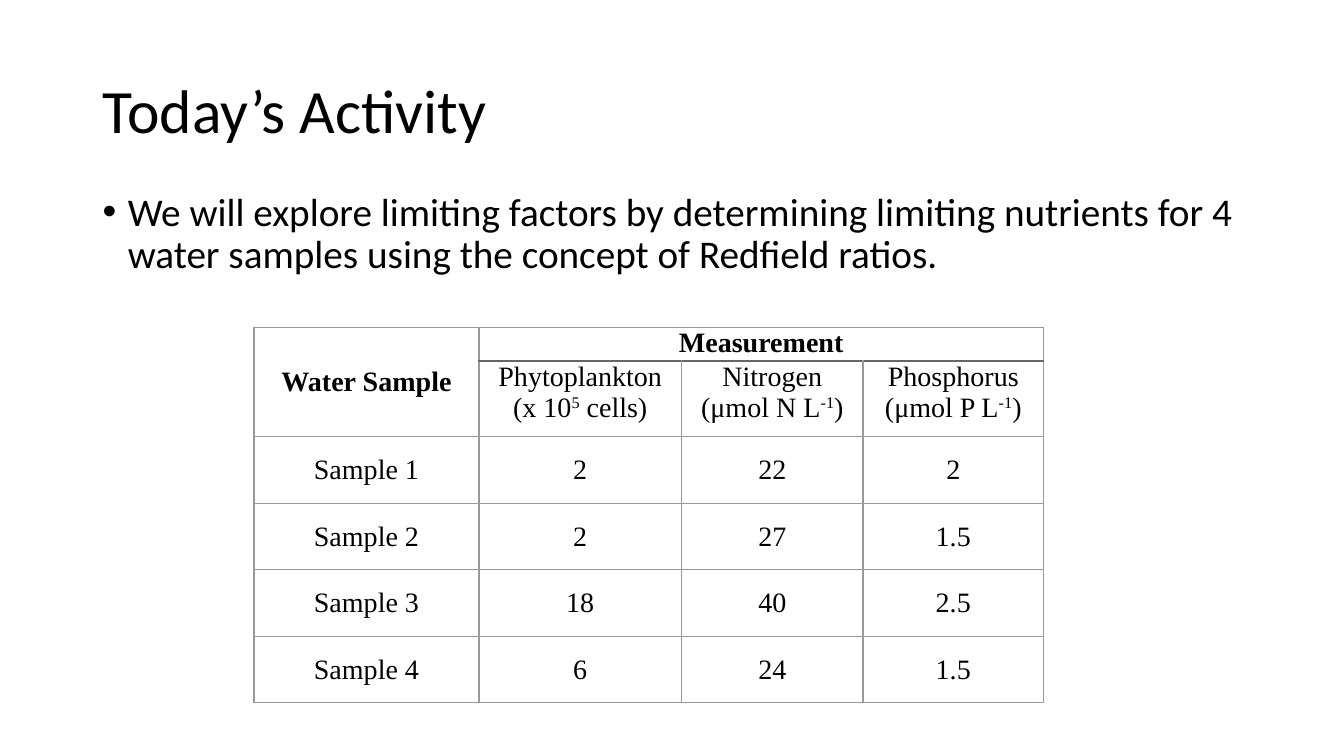
from dataclasses import dataclass
from lxml.etree import SubElement
from pptx import Presentation
from pptx.dml.color import RGBColor
from pptx.enum.text import MSO_ANCHOR, PP_ALIGN
from pptx.oxml import parse_xml
from pptx.oxml.ns import nsdecls, qn
from pptx.util import Inches, Pt


@dataclass(frozen=True)
class Theme:
    ink: str = "000000"
    grid: str = "999999"
    rule: str = "666666"
    sans: str = "Calibri"
    serif: str = "Times New Roman"
    title: int = 44
    body: int = 28
    cell: int = 20


theme = Theme()


def add_run(para, text, face, size, bold=False, raised=False):
    run = para.add_run()
    run.text = text
    run.font.name = face
    run.font.size = Pt(size)
    run.font.bold = bold
    run.font.color.rgb = RGBColor.from_string(theme.ink)
    if raised:
        run.font._element.set("baseline", "30000")


def add_box(top, height, anchor):
    box = slide.shapes.add_textbox(Inches(0.92), Inches(top), Inches(11.5), Inches(height))
    frame = box.text_frame
    frame.word_wrap = True
    frame.vertical_anchor = anchor
    para = frame.paragraphs[0]
    para.line_spacing = 0.9
    return para


deck = Presentation()
deck.slide_width = Inches(13.33)
deck.slide_height = Inches(7.5)
slide = deck.slides.add_slide(deck.slide_layouts[6])

# Title
para = add_box(0.4, 1.45, MSO_ANCHOR.MIDDLE)
add_run(para, "Today’s Activity", theme.sans, theme.title)

# Bullet
para = add_box(1.86, 4.76, MSO_ANCHOR.TOP)
props = para._p.get_or_add_pPr()
props.set("marL", str(Inches(0.25)))
props.set("indent", str(-Inches(0.25)))
SubElement(props, qn("a:buFont"), typeface="Arial")
SubElement(props, qn("a:buChar"), char="•")
add_run(para, "We will explore limiting factors by determining limiting nutrients "
        "for 4 water samples using the concept of Redfield ratios.",
        theme.sans, theme.body)

# Table contents: each cell is a list of parts, every second one raised
rows = [
    [["Water Sample"], ["Measurement"], [], []],
    [[], ["Phytoplankton (x 10", "5", " cells)"],
     ["Nitrogen (μmol N L", "-1", ")"], ["Phosphorus (μmol P L", "-1", ")"]],
]
samples = [("2", "22", "2"), ("2", "27", "1.5"), ("18", "40", "2.5"), ("6", "24", "1.5")]
for num, values in enumerate(samples, 1):
    rows.append([[f"Sample {num}"]] + [[value] for value in values])

# Table grid
widths = [2.23, 2.01, 1.8, 1.79]
heights = [0.33, 0.75] + [0.66] * len(samples)
table = slide.shapes.add_table(len(rows), len(widths), Inches(2.52), Inches(3.25),
                               Inches(sum(widths)), Inches(sum(heights))).table
table.first_row = table.horz_banding = False
for column, width in zip(table.columns, widths):
    column.width = Inches(width)
for row, height in zip(table.rows, heights):
    row.height = Inches(height)
table.cell(0, 0).merge(table.cell(1, 0))
table.cell(0, 1).merge(table.cell(0, 3))

# Table cells
for r, row in enumerate(rows):
    for c, parts in enumerate(row):
        cell = table.cell(r, c)
        cell.fill.background()
        cell.margin_left = cell.margin_right = Inches(0.07)
        cell.margin_top = cell.margin_bottom = 0
        middle = c == 0 or r > 1
        cell.vertical_anchor = MSO_ANCHOR.MIDDLE if middle else MSO_ANCHOR.TOP
        para = cell.text_frame.paragraphs[0]
        para.alignment = PP_ALIGN.CENTER
        for i, part in enumerate(parts):
            add_run(para, part, theme.serif, theme.cell, bold=r == 0, raised=i % 2 == 1)

        # Borders, with a darker rule under "Measurement"
        for i, side in enumerate("LRTB"):
            dark = c > 0 and (r, side) in [(0, "B"), (1, "T")]
            color, weight = (theme.rule, 1.5) if dark else (theme.grid, 1)
            cell._tc.get_or_add_tcPr().insert(i, parse_xml(
                f'<a:ln{side} {nsdecls("a")} w="{Pt(weight)}"><a:solidFill>'
                f'<a:srgbClr val="{color}"/></a:solidFill></a:ln{side}>'))

deck.save("out.pptx")
